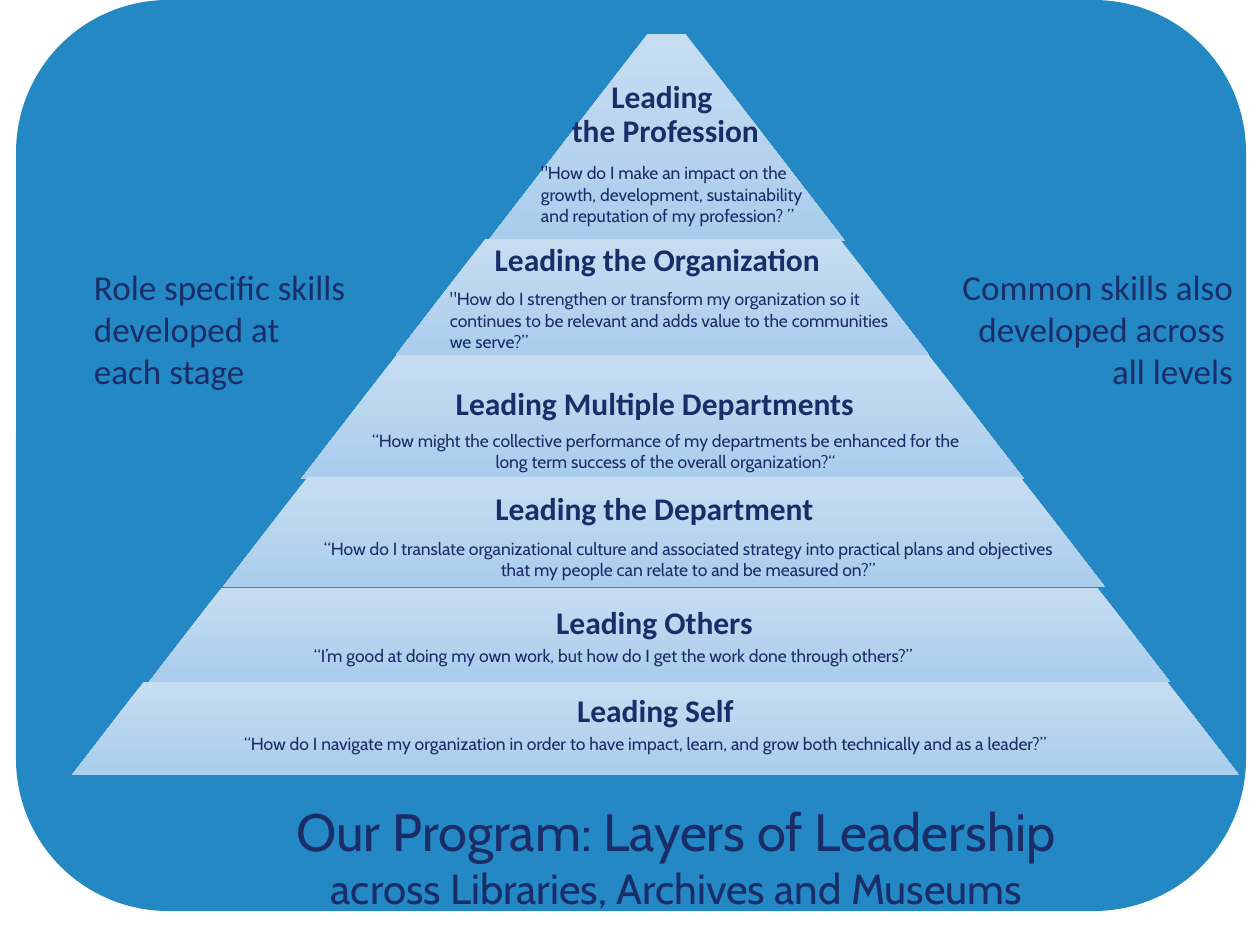
import pptx
import pptx.dml.color
import pptx.enum.shapes
import pptx.enum.text
import pptx.util

SHAPE = pptx.enum.shapes.MSO_SHAPE
ALIGN = pptx.enum.text.PP_ALIGN
ANCHOR = pptx.enum.text.MSO_ANCHOR
PX = 914400 / 126

THEME = {
    "panel": "2388C4", "tier_top": "C6DDF1", "tier_bottom": "AACDED", "ink": "1A2D68",
    "heading": {"size": 18, "name": "Calibri", "bold": True},
    "side": {"size": 20, "name": "Calibri"},
    "quote": {"size": 10, "name": "Cabin"},
    "title": {"size": 30, "name": "Cabin"},
    "subtitle": {"size": 24, "name": "Cabin"},
}

# Content: boxes are left, top, width, height in px
PANEL = (16, 0, 1230, 911)
TIERS = [
    {"box": (488, 34, 357, 207), "heading": "Leading \nthe Profession",
     "heading_box": (520, 73, 291, 84), "space_before": 6.3,
     "quote": "\"How do I make an impact on the growth, development, sustainability "
              "and reputation of my profession? ”",
     "quote_box": (528, 139, 312, 110), "align": ALIGN.LEFT},
    {"box": (396, 239, 533, 116), "heading": "Leading the Organization",
     "heading_box": (488, 215, 339, 93),
     "quote": "\"How do I strengthen or transform my organization so it continues to be "
              "relevant and adds value to the communities we serve?”",
     "quote_box": (437, 265, 470, 110), "align": ALIGN.LEFT},
    {"box": (301, 355, 723, 124), "heading": "Leading Multiple Departments",
     "heading_box": (435, 344, 440, 123),
     "quote": "“How might the collective performance of my departments be enhanced for "
              "the long term success of the overall organization?“",
     "quote_box": (343, 396, 645, 110), "align": ALIGN.CENTER},
    {"box": (223, 477, 882, 110), "heading": "Leading the Department",
     "heading_box": (402, 481, 505, 58),
     "quote": "“How do I translate organizational culture and associated strategy into "
              "practical plans and objectives that my people can relate to and be measured on?”",
     "quote_box": (301, 537, 774, 44), "align": ALIGN.CENTER},
    {"box": (149, 588, 1021, 94), "heading": "Leading Others",
     "heading_box": (339, 588, 631, 72),
     "quote": "“I’m good at doing my own work, but how do I get the work done through others?”",
     "quote_box": (301, 601, 935, 110), "align": ALIGN.LEFT},
    {"box": (72, 682, 1167, 93), "heading": "Leading Self",
     "heading_box": (276, 651, 759, 123),
     "quote": "“How do I navigate my organization in order to have impact, learn, and grow "
              "both technically and as a leader?”",
     "quote_box": (151, 702, 988, 84), "align": ALIGN.CENTER},
]
SIDES = [
    ((905, 260, 341, 140), ["Common skills also", "developed across ", "all levels"], ALIGN.RIGHT),
    ((81, 260, 341, 140), ["Role specific skills", "developed at \neach stage"], ALIGN.LEFT),
]
TITLE_BOX = (166, 786, 1021, 44)
TITLE = [("Our Program: Layers of Leadership", "title"),
         ("across Libraries, Archives and Museums", "subtitle")]


def emu(box):
    return [round(v * PX) for v in box]


def rgb(key):
    return pptx.dml.color.RGBColor.from_string(THEME[key])


def add_shape(s, kind, box, adjustment):
    sp = s.shapes.add_shape(kind, *emu(box))
    sp.adjustments[0] = adjustment
    sp.shadow.inherit = False
    sp.line.fill.background()
    return sp


def add_text(s, box, lines, align, inset, anchor=ANCHOR.MIDDLE, **spacing):
    """Write (text, style) lines, one paragraph each; inset is (x, y) in px."""
    tf = s.shapes.add_textbox(*emu(box)).text_frame
    x, y = emu(inset)
    frame = {"word_wrap": True, "vertical_anchor": anchor, "margin_left": x,
             "margin_right": x, "margin_top": y, "margin_bottom": y}
    for name, value in frame.items():
        setattr(tf, name, value)
    for i, (text, style) in enumerate(lines):
        p = tf.paragraphs[0] if i == 0 else tf.add_paragraph()
        p.text = text
        for name, value in {"alignment": align, **spacing}.items():
            setattr(p, name, value)
        for r in p.runs:
            for name, value in THEME[style].items():
                setattr(r.font, name, pptx.util.Pt(value) if name == "size" else value)
            r.font.color.rgb = rgb("ink")


def main():
    prs = pptx.Presentation()
    prs.slide_width, prs.slide_height = emu((1260, 945))
    s = prs.slides.add_slide(prs.slide_layouts[6])

    # Background panel
    panel = add_shape(s, SHAPE.ROUNDED_RECTANGLE, PANEL, 0.167)
    panel.fill.solid()
    panel.fill.fore_color.rgb = rgb("panel")

    # Pyramid tiers with headings
    for tier in TIERS:
        sp = add_shape(s, SHAPE.TRAPEZOID, tier["box"], 0.77)
        sp.fill.gradient()
        sp.fill.gradient_angle = 270
        for stop, key in zip(sp.fill.gradient_stops, ("tier_top", "tier_bottom")):
            stop.color.rgb = rgb(key)
        add_text(s, tier["heading_box"], [(tier["heading"], "heading")], ALIGN.CENTER, (3, 3),
                 line_spacing=0.9, space_after=pptx.util.Pt(6.3),
                 space_before=pptx.util.Pt(tier.get("space_before", 0)))

    # Side notes and title
    for box, lines, align in SIDES:
        add_text(s, box, [(line, "side") for line in lines], align, (13, 6), ANCHOR.TOP)
    add_text(s, TITLE_BOX, TITLE, ALIGN.CENTER, (13, 13), ANCHOR.TOP)

    # Question for each tier
    for tier in TIERS:
        add_text(s, tier["quote_box"], [(tier["quote"], "quote")], tier["align"], (13, 13))

    prs.save("out.pptx")


if __name__ == "__main__":
    main()
